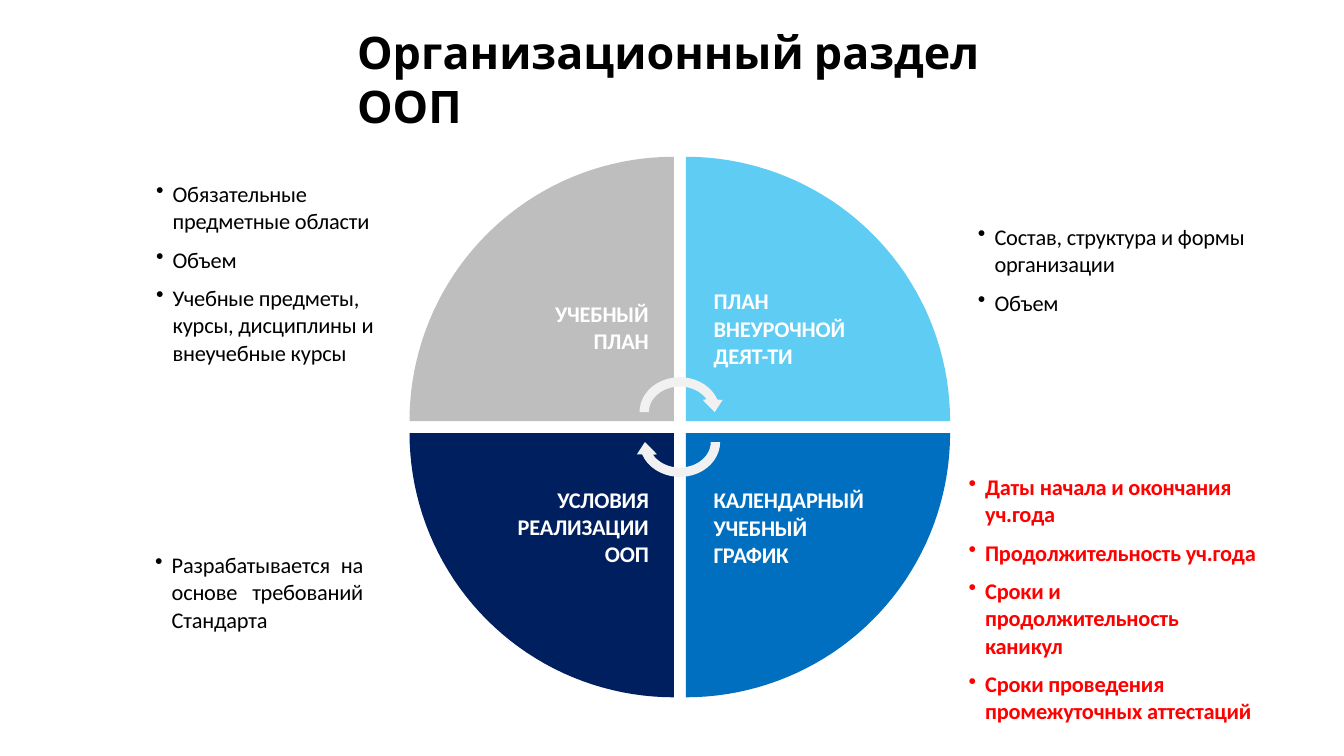
from math import cos, radians, sin

from lxml.etree import SubElement
from pptx import Presentation
from pptx.dml.color import RGBColor
from pptx.enum.text import MSO_ANCHOR, PP_ALIGN as Align
from pptx.oxml.ns import qn
from pptx.util import Pt

BLACK, WHITE, RED = "000000", "FFFFFF", "FF0000"


def color(value):
    return RGBColor.from_string(value)


def add_bullet(para, mark):
    bullet = SubElement(para._p.get_or_add_pPr(), qn("a:buChar"))
    bullet.set("char", mark)


def add_text(page, box, lines, *, size=12, font="Calibri", ink=BLACK, bold=False,
             align=Align.LEFT, indent=0, tracking=-0.1):
    """Lines are (text, space before, line spacing, starts with a bullet)."""
    shape = page.shapes.add_textbox(*map(Pt, box))
    frame = shape.text_frame
    frame.word_wrap = True
    frame.vertical_anchor = MSO_ANCHOR.TOP
    frame.margin_left = frame.margin_right = frame.margin_bottom = 0
    frame.margin_top = Pt(2)
    for index, (text, before, spacing, bulleted) in enumerate(lines):
        para = frame.add_paragraph() if index else frame.paragraphs[0]
        para.alignment = align
        para.space_before = Pt(before if index else 0)
        para.line_spacing = spacing
        layout = para._p.get_or_add_pPr()
        layout.set("marL", str(Pt(indent)))
        if bulleted:
            layout.set("indent", str(-Pt(8.9)))
            add_bullet(para, "•")
        span = para.add_run()
        span.text = text
        span.font.size, span.font.name = Pt(size), font
        span.font.bold, span.font.color.rgb = bold, color(ink)
        span._r.get_or_add_rPr().set("spc", str(round(tracking * 100)))


def add_outline(page, points, fill):
    points = [(Pt(x), Pt(y)) for x, y in points]
    builder = page.shapes.build_freeform(*points[0], scale=1.0)
    builder.add_line_segments(points[1:], close=True)
    shape = builder.convert_to_shape()
    shape.shadow.inherit = False
    shape.fill.solid()
    shape.fill.fore_color.rgb = color(fill)
    shape.line.fill.background()


def arc(radius_x, radius_y, start, end, steps):
    angles = [radians(start + (end - start) * i / steps) for i in range(steps + 1)]
    return [(radius_x * cos(a), -radius_y * sin(a)) for a in angles]


def place(points, center, flip_x=1, flip_y=1):
    return [(center[0] + flip_x * x, center[1] + flip_y * y) for x, y in points]


def draw_wheel(page, box, gap):
    left, top, width, height = box
    middle_x, middle_y = left + width / 2, top + height / 2
    radius = (width - gap) / 2

    # Quadrants: side, level, fill, label lines, label width, label top from middle
    quadrants = [
        (-1, -1, "BEBEBE", ["УЧЕБНЫЙ", "ПЛАН"], 53.3, -70),
        (1, -1, "5ECCF3", ["ПЛАН", "ВНЕУРОЧНОЙ ДЕЯТ-ТИ"], 73.5, -77.2),
        (1, 1, "006FC0", ["КАЛЕНДАРНЫЙ УЧЕБНЫЙ ГРАФИК"], 83.5, 29.5),
        (-1, 1, "001F5F", ["УСЛОВИЯ", "РЕАЛИЗАЦИИ", "ООП"], 73.5, 29.5),
    ]
    for side, level, fill, label, label_width, offset in quadrants:
        corner = middle_x + side * gap / 2, middle_y + level * gap / 2
        wedge = [(0, 0)] + arc(radius, radius, 0, 90, 40)
        add_outline(page, place(wedge, corner, side, -level * -1 * -1), fill)
        label_left = middle_x + 17.2 if side > 0 else middle_x - 16.6 - label_width
        add_text(page, (label_left, middle_y + offset, label_width, 46),
                 [(text, 0.2, 1.02 if side > 0 else 1.0, False) for text in label],
                 ink=WHITE, bold=True,
                 align=Align.LEFT if side > 0 else Align.RIGHT,
                 indent=0.9 if side > 0 else 0)

    # Two circular arrows, one the half turn of the other
    arrow = (arc(21.6, 18.7, 180, 20.8, 20)
             + [(23, -6.6), (18.7, 0), (12.2, -6.6)]
             + arc(16.6, 13.7, 30, 180, 20))
    for turn in (1, -1):
        add_outline(page, place(arrow, (middle_x, middle_y - turn * 8), turn, turn),
                    "F1F1F1")


def draw_notes(page):
    # Side lists: box, lines, format
    notes = [
        ((82.6, 94.4, 121, 101.5), [
            ("Обязательные", 0, 1.0, True),
            ("предметные области", 0.2, 1.0, False),
            ("Объем", 6.2, 1.0, True),
            ("Учебные предметы, курсы, дисциплины и внеучебные курсы", 5.9, 1.02, True),
        ], {}),
        ((522.9, 117.5, 147.6, 51.8), [
            ("Состав, структура и формы", 0, 1.0, True),
            ("организации", 0.2, 1.0, False),
            ("Объем", 6.2, 1.0, True),
        ], {}),
        ((82.1, 293, 112.5, 46), [
            ("Разрабатывается на основе требований Стандарта", 0, 1.02, True),
        ], {"align": Align.JUSTIFY}),
        ((517.9, 251.4, 156.2, 136), [
            ("Даты начала и окончания", 0, 1.0, True),
            ("уч.года", 0.2, 1.0, False),
            ("Продолжительность уч.года", 6.2, 1.0, True),
            ("Сроки и продолжительность каникул", 5.8, 1.02, True),
            ("Сроки проведения", 6.2, 1.0, True),
            ("промежуточных аттестаций", 0.2, 1.0, False),
        ], {"ink": RED, "bold": True}),
    ]
    for box, lines, style in notes:
        add_text(page, box, lines, indent=9.9, **style)


def main():
    deck = Presentation()
    deck.slide_width, deck.slide_height = Pt(720), Pt(405)
    page = deck.slides.add_slide(deck.slide_layouts[6])
    add_text(page, (190.4, 11.4, 359.3, 31),
             [("Организационный раздел ООП", 0, 1.0, False)],
             size=24, font="Cabin", bold=True, indent=0.9, tracking=0)
    draw_notes(page)
    draw_wheel(page, (219.4, 84, 289.6, 289.6), gap=6.4)
    deck.save("out.pptx")


if __name__ == "__main__":
    main()
